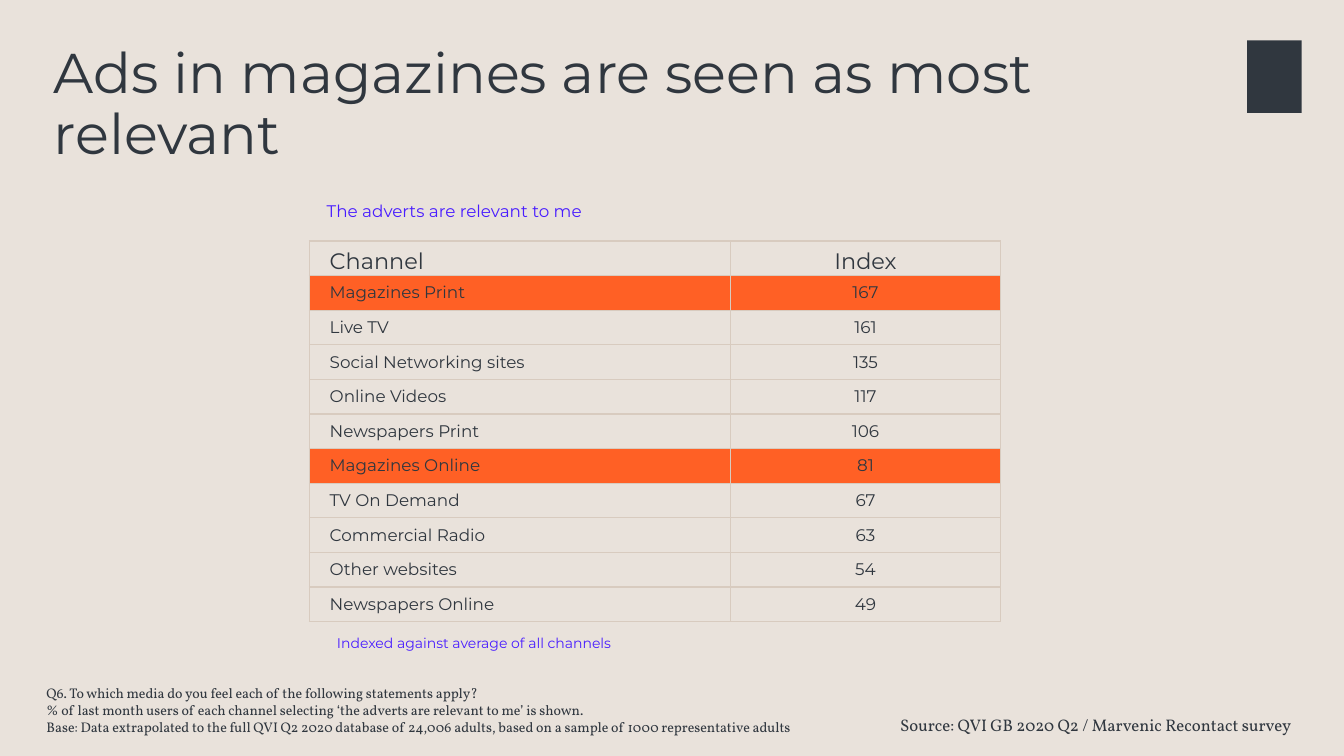
from dataclasses import dataclass, field
from typing import Any

from lxml import etree
from pptx import Presentation
from pptx.dml.color import RGBColor
from pptx.enum.shapes import MSO_SHAPE
from pptx.enum.text import MSO_ANCHOR, MSO_AUTO_SIZE, PP_ALIGN
from pptx.oxml.ns import qn
from pptx.util import Inches, Pt

TOP, MIDDLE, BOTTOM = MSO_ANCHOR.TOP, MSO_ANCHOR.MIDDLE, MSO_ANCHOR.BOTTOM
LEFT, CENTER, RIGHT = PP_ALIGN.LEFT, PP_ALIGN.CENTER, PP_ALIGN.RIGHT
FIXED, GROW = MSO_AUTO_SIZE.NONE, MSO_AUTO_SIZE.SHAPE_TO_FIT_TEXT
RECTANGLE = MSO_SHAPE.RECTANGLE

SLIDE_WIDTH, SLIDE_HEIGHT = Inches(13.33), Inches(7.5)
SANS, SERIF = "Montserrat", "Vollkorn"
COLORS = {
    "sand": "E9E2DB",
    "ink": "30373F",
    "violet": "491DFF",
    "highlight": "FF6025",
    "border": "D8CBBF",
}
MARGINS = ("margin_left", "margin_right", "margin_top", "margin_bottom")


@dataclass(frozen=True)
class Box:
    """Left, top, width and height in percent of the slide."""
    left: float
    top: float
    width: float
    height: float

    def emu(self) -> tuple[int, int, int, int]:
        return (
            round(self.left * SLIDE_WIDTH / 100),
            round(self.top * SLIDE_HEIGHT / 100),
            round(self.width * SLIDE_WIDTH / 100),
            round(self.height * SLIDE_HEIGHT / 100),
        )


@dataclass(frozen=True)
class Style:
    font: str
    size: float
    color: str = "ink"
    paragraph: dict[str, Any] = field(default_factory=dict)


@dataclass(frozen=True)
class Caption:
    box: Box
    lines: tuple[str, ...]
    style: Style
    inset: float = 0.03
    frame: dict[str, Any] = field(default_factory=dict)


@dataclass(frozen=True)
class Channel:
    name: str
    index: str
    highlighted: bool = False


# Content
TITLE = "Ads in magazines are seen as most relevant"
TITLE_BOX = Box(3.23, 5.33, 83.42, 19.33)
TITLE_STYLE = Style(SANS, 40, paragraph={"alignment": LEFT, "line_spacing": 0.9})
EMBLEM_BOX = Box(92.8, 5.33, 4.05, 9.6)
TABLE_BOX = Box(23.03, 31.87, 51.39, 50.4)
COLUMN_SHARES = (0.61, 0.39)
HEADER = Channel("Channel", "Index")
CHANNELS = (
    Channel("Magazines Print", "167", True),
    Channel("Live TV", "161"),
    Channel("Social Networking sites", "135"),
    Channel("Online Videos", "117"),
    Channel("Newspapers Print", "106"),
    Channel("Magazines Online", "81", True),
    Channel("TV On Demand", "67"),
    Channel("Commercial Radio", "63"),
    Channel("Other websites", "54"),
    Channel("Newspapers Online", "49"),
)
CAPTIONS = (
    Caption(
        Box(63.32, 93.33, 33.53, 5.47),
        ("Source: QVI GB 2020 Q2 / Marvenic Recontact survey",),
        Style(SERIF, 12, paragraph={
            "alignment": RIGHT, "line_spacing": 0.9, "space_before": Pt(10)}),
        inset=0.1,
        frame={"vertical_anchor": MIDDLE},
    ),
    Caption(
        Box(3.23, 86.13, 60.09, 11.47),
        (
            "Q6. To which media do you feel each of the following statements apply?",
            "% of last month users of each channel selecting ‘the adverts are relevant to me’ is shown.",
            "Base: Data extrapolated to the full QVI Q2 2020 database of 24,006 adults, "
            "based on a sample of 1000 representative adults",
        ),
        Style(SERIF, 10),
        frame={"vertical_anchor": BOTTOM},
    ),
    Caption(
        Box(24.31, 83.6, 21.91, 2.93),
        ("Indexed against average of all channels",),
        Style(SANS, 10, "violet", {"alignment": CENTER}),
        frame={"vertical_anchor": MIDDLE, "word_wrap": False, "auto_size": GROW},
    ),
    Caption(
        Box(24.31, 26.53, 33.76, 2.67),
        ("The adverts are relevant to me",),
        Style(SANS, 12, "violet"),
        inset=0,
        frame={"auto_size": GROW},
    ),
)


def rgb(name: str) -> RGBColor:
    return RGBColor.from_string(COLORS[name])


def apply(target: Any, values: dict[str, Any]) -> None:
    for attribute, value in values.items():
        setattr(target, attribute, value)


def write(frame: Any, lines: tuple[str, ...], style: Style) -> None:
    frame.text = "\n".join(lines)
    for paragraph in frame.paragraphs:
        apply(paragraph, style.paragraph)
        for run in paragraph.runs:
            apply(run.font, {"name": style.font, "size": Pt(style.size), "bold": False})
            run.font.color.rgb = rgb(style.color)


def add_title(slide: Any) -> None:
    title = slide.shapes.title
    apply(title, dict(zip(("left", "top", "width", "height"), TITLE_BOX.emu())))
    apply(title.text_frame, {
        "vertical_anchor": TOP, "word_wrap": True, "auto_size": FIXED})
    write(title.text_frame, (TITLE,), TITLE_STYLE)


def add_emblem(slide: Any) -> None:
    emblem = slide.shapes.add_shape(RECTANGLE, *EMBLEM_BOX.emu())
    emblem.shadow.inherit = False
    emblem.fill.solid()
    emblem.fill.fore_color.rgb = rgb("ink")
    emblem.line.fill.background()


def add_caption(slide: Any, caption: Caption) -> None:
    frame = slide.shapes.add_textbox(*caption.box.emu()).text_frame
    margins = dict.fromkeys(MARGINS, Inches(caption.inset))
    apply(frame, {"word_wrap": True, "auto_size": FIXED, **margins, **caption.frame})
    write(frame, caption.lines, caption.style)


def add_borders(cell: Any) -> None:
    properties = cell._tc.get_or_add_tcPr()
    for position, side in enumerate(("lnL", "lnR", "lnT", "lnB")):
        line = etree.Element(qn(f"a:{side}"), w=str(Pt(1)))
        fill = etree.SubElement(line, qn("a:solidFill"))
        etree.SubElement(fill, qn("a:srgbClr"), val=COLORS["border"])
        properties.insert(position, line)


def add_channel_table(slide: Any) -> None:
    rows = (HEADER, *CHANNELS)
    left, top, width, height = TABLE_BOX.emu()
    table = slide.shapes.add_table(
        len(rows), len(COLUMN_SHARES), left, top, width, height).table
    apply(table, {"first_row": False, "horz_banding": False})
    for column, share in zip(table.columns, COLUMN_SHARES):
        column.width = round(width * share)
    for row_number, channel in enumerate(rows):
        is_header = channel is HEADER
        table.rows[row_number].height = height // len(rows)
        for column_number, (text, alignment, indent) in enumerate((
                (channel.name, LEFT, 0.2), (channel.index, CENTER, 0))):
            cell = table.cell(row_number, column_number)
            apply(cell, {
                **dict.fromkeys(MARGINS, 0),
                "margin_left": Inches(indent),
                "vertical_anchor": BOTTOM if is_header else MIDDLE,
            })
            write(cell.text_frame, (text,), Style(
                SANS, 16 if is_header else 12, paragraph={"alignment": alignment}))
            if channel.highlighted:
                cell.fill.solid()
                cell.fill.fore_color.rgb = rgb("highlight")
            else:
                cell.fill.background()
            add_borders(cell)


def main() -> None:
    deck = Presentation()
    apply(deck, {"slide_width": SLIDE_WIDTH, "slide_height": SLIDE_HEIGHT})
    slide = deck.slides.add_slide(deck.slide_layouts.get_by_name("Title Only"))
    slide.background.fill.solid()
    slide.background.fill.fore_color.rgb = rgb("sand")
    add_emblem(slide)
    add_title(slide)
    add_channel_table(slide)
    for caption in CAPTIONS:
        add_caption(slide, caption)
    deck.save("out.pptx")


if __name__ == "__main__":
    main()
